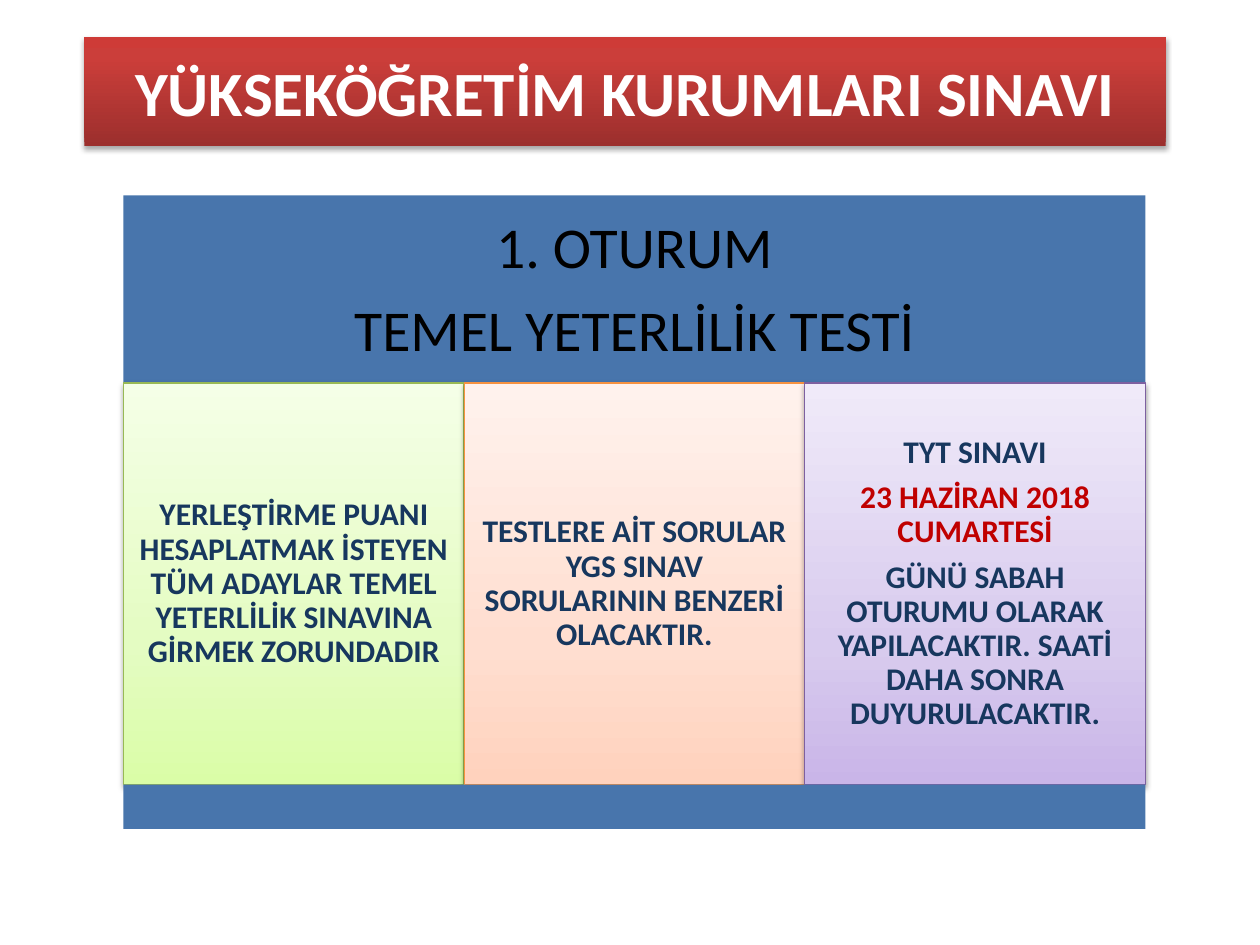
from dataclasses import dataclass
from lxml import etree
from pptx import Presentation
from pptx import util as u
from pptx.dml.color import RGBColor
from pptx.enum import shapes, text
from pptx.oxml import parse_xml
from pptx.oxml.ns import qn

HUES = {
    "blue": "4875AC", "navy": "17375E", "red": "C00000",
    "black": "000000", "white": "FFFFFF",
    "green": "98B955", "orange": "F69240", "purple": "7D60A0",
}
NS = 'xmlns:a="http://schemas.openxmlformats.org/drawingml/2006/main"'
LEFT, WIDTH = 2.49, 20.6
HEAD, BODY, FOOT = 3.94, 7.72, 15.82


@dataclass
class Panel:
    lines: list[tuple[str, str]]
    stops: list[tuple[int, str]]
    edge: str


PANELS = [
    Panel([("YERLEŞTİRME PUANI HESAPLATMAK İSTEYEN TÜM ADAYLAR TEMEL "
            "YETERLİLİK SINAVINA GİRMEK ZORUNDADIR", "navy")],
          [(0, "DAFDA7"), (35, "E4FCC2"), (100, "F5FFE7")], "green"),
    Panel([("TESTLERE AİT SORULAR YGS SINAV SORULARININ BENZERİ OLACAKTIR.", "navy")],
          [(0, "FFD2BD"), (35, "FFDED0"), (100, "FFF2ED")], "orange"),
    Panel([("TYT SINAVI", "navy"),
           ("23 HAZİRAN 2018 CUMARTESİ", "red"),
           ("GÜNÜ SABAH OTURUMU OLARAK YAPILACAKTIR. SAATİ DAHA SONRA "
            "DUYURULACAKTIR.", "navy")],
          [(0, "C9B5E8"), (35, "D8CBEE"), (100, "F0EAF9")], "purple"),
]


def color(name: str) -> RGBColor:
    return RGBColor.from_string(HUES[name])


def write(shape, lines: list[tuple[str, str]], *, size: float, bold: bool = False,
          inset: float = 0.25, pitch: float = 1.0, after: float = 0) -> None:
    frame = shape.text_frame
    frame.word_wrap = True
    frame.auto_size = text.MSO_AUTO_SIZE.NONE
    frame.vertical_anchor = text.MSO_ANCHOR.MIDDLE
    frame.margin_left = frame.margin_right = u.Cm(inset)
    frame.margin_top = frame.margin_bottom = u.Cm(min(inset, 0.36))
    for i, (line, hue) in enumerate(lines):
        para = frame.add_paragraph() if i else frame.paragraphs[0]
        para.alignment = text.PP_ALIGN.CENTER
        para.line_spacing = pitch
        para.space_after = u.Pt(after)
        run = para.add_run()
        run.text = line
        run.font.name = "Calibri"
        run.font.size = u.Pt(size)
        run.font.bold = bold
        run.font.color.rgb = color(hue)


def box(slide, left: float, top: float, width: float, height: float):
    shape = slide.shapes.add_shape(shapes.MSO_SHAPE.RECTANGLE, u.Cm(left), u.Cm(top),
                                   u.Cm(width), u.Cm(height))
    shape.shadow.inherit = False
    shape.line.fill.background()
    return shape


def band(slide, top: float, height: float):
    shape = box(slide, LEFT, top, WIDTH, height)
    shape.fill.solid()
    shape.fill.fore_color.rgb = color("blue")
    return shape


def shade(shape, stops: list[tuple[int, str]]) -> None:
    shape.fill.gradient()
    grad = shape._element.spPr.find(qn("a:gradFill"))
    marks = "".join(f'<a:gs pos="{pos * 1000}"><a:srgbClr val="{hue}"/></a:gs>'
                    for pos, hue in stops)
    fresh = parse_xml(f'<a:gradFill {NS} rotWithShape="1"><a:gsLst>{marks}</a:gsLst>'
                      '<a:lin ang="16200000" scaled="0"/></a:gradFill>')
    grad.getparent().replace(grad, fresh)


def drop(shape, alpha: int, dist: float) -> None:
    shape.shadow.inherit = False
    glow = shape._element.spPr.find(qn("a:effectLst"))
    cast = etree.SubElement(glow, qn("a:outerShdw"), blurRad=str(u.Pt(3.1)),
                            dist=str(u.Pt(dist)), dir="5400000", rotWithShape="0")
    tint = etree.SubElement(cast, qn("a:srgbClr"), val=HUES["black"])
    etree.SubElement(tint, qn("a:alpha"), val=str(alpha * 1000))


def banner(slide, label: str) -> None:
    title = slide.shapes.title
    title.left, title.top = u.Cm(1.7), u.Cm(0.74)
    title.width, title.height = u.Cm(21.8), u.Cm(2.2)
    title._element.spPr.append(
        parse_xml(f'<a:prstGeom {NS} prst="roundRect"><a:avLst/></a:prstGeom>'))
    shade(title, [(0, "9C2F2D"), (80, "CB3E3A"), (100, "CE3B37")])
    title.line.fill.background()
    drop(title, 35, 1.8)
    write(title, [(label, "white")], size=36, bold=True)


def main() -> None:
    deck = Presentation()
    deck.slide_width, deck.slide_height = u.Cm(25.4), u.Cm(19.05)
    slide = deck.slides.add_slide(deck.slide_layouts[5])
    banner(slide, "YÜKSEKÖĞRETİM KURUMLARI SINAVI")

    head = band(slide, HEAD, 3.86)
    write(head, [("1. OTURUM", "black"), ("TEMEL YETERLİLİK TESTİ", "black")],
          size=33, inset=0.36, pitch=0.9, after=11.5)

    step = WIDTH / len(PANELS)
    for i, panel in enumerate(PANELS):
        cell = box(slide, LEFT + i * step, BODY, step, FOOT - BODY)
        shade(cell, panel.stops)
        cell.line.color.rgb = color(panel.edge)
        cell.line.width = u.Pt(0.75)
        drop(cell, 38, 1.6)
        write(cell, panel.lines, size=18, bold=True, inset=0.18, pitch=0.9, after=6.3)

    band(slide, FOOT, 0.89)
    deck.save("out.pptx")


if __name__ == "__main__":
    main()
